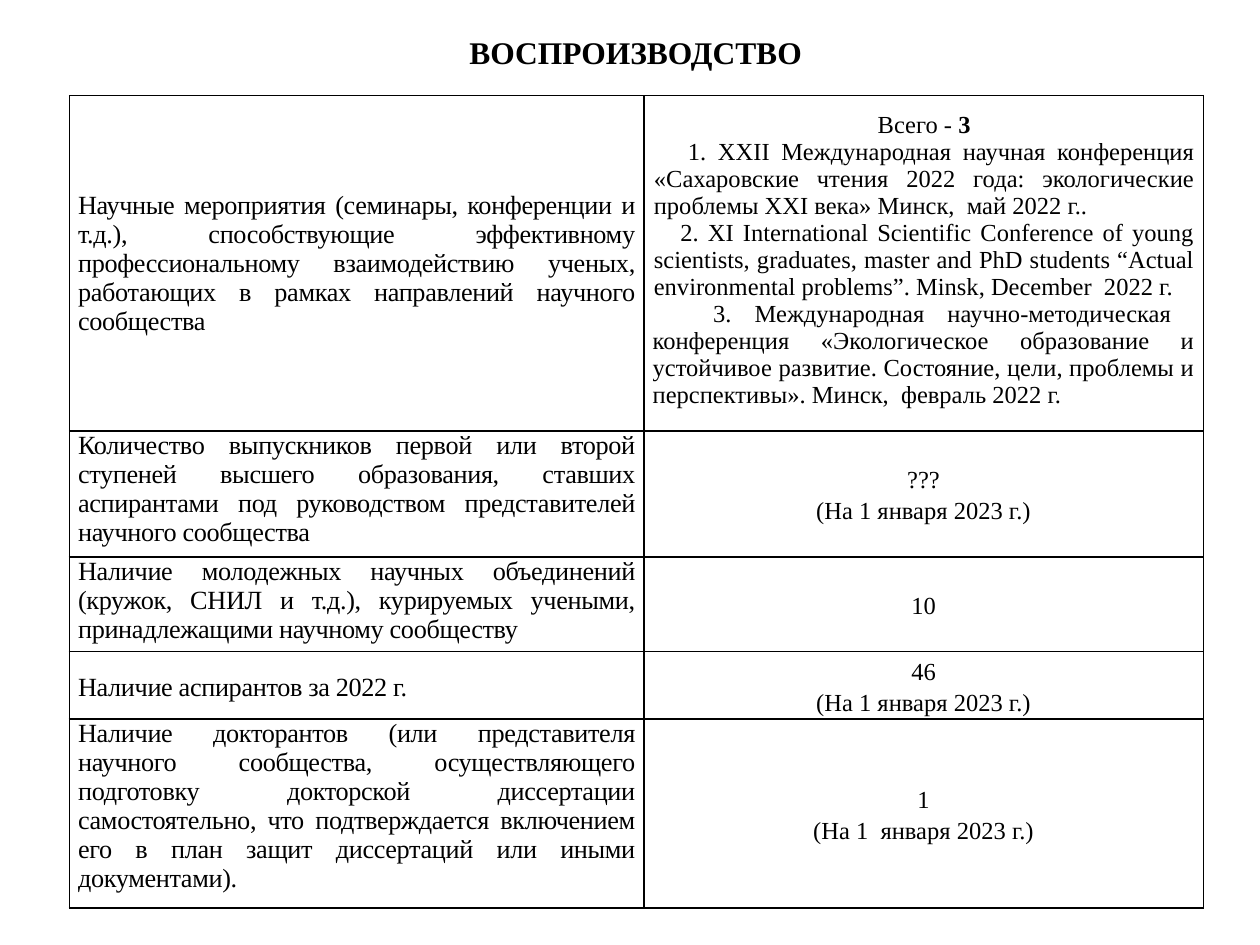
from dataclasses import dataclass

from lxml.etree import SubElement
from pptx import Presentation
from pptx.dml.color import RGBColor
from pptx.enum.text import MSO_ANCHOR, MSO_AUTO_SIZE, PP_ALIGN
from pptx.oxml.ns import qn
from pptx.util import Inches, Pt

BLACK = RGBColor(0, 0, 0)
FONT_NAME = "Times New Roman"
COLUMN_WIDTHS = (4.56, 4.44)
ROW_HEIGHTS = (2.66, 1.0, 0.75, 0.53, 1.5)


@dataclass
class Line:
    text: str
    size: float = 14
    alignment: PP_ALIGN = PP_ALIGN.CENTER
    line_spacing: float | Pt = 1.15
    margin: float = 0
    indent: float = 0
    tracking: int = 0
    bold_ending: str = ""


@dataclass
class Entry:
    lines: list[Line]
    anchor: MSO_ANCHOR = MSO_ANCHOR.MIDDLE
    border_width: float = 1


def criterion(text: str, line_spacing: float = 1.0) -> Line:
    return Line(text, 15, PP_ALIGN.JUSTIFY, line_spacing, tracking=-20)


def conference(text: str, margin: float, indent: float) -> Line:
    return Line(text, 14, PP_ALIGN.JUSTIFY, 1.0, margin, indent)


ROWS = [
    (
        Entry([criterion(
            "Научные мероприятия (семинары, конференции и т.д.), способствующие "
            "эффективному профессиональному взаимодействию ученых, работающих в "
            "рамках направлений научного сообщества")], border_width=0.75),
        Entry([
            Line("Всего - ", line_spacing=Pt(12), margin=0.01, bold_ending="3"),
            conference(
                "1. XXII Международная научная конференция «Сахаровские чтения 2022 "
                "года: экологические проблемы XXI века» Минск,  май 2022 г..",
                0.01, 0.27),
            conference(
                "2. XI International Scientific Conference of young scientists, "
                "graduates, master and PhD students “Actual environmental problems”. "
                "Minsk, December  2022 г.", 0.01, 0.21),
            conference(
                "3. Международная научно-методическая  конференция «Экологическое "
                "образование и устойчивое развитие. Состояние, цели, проблемы и "
                "перспективы». Минск,  февраль 2022 г.", 0, 0.48),
        ]),
    ),
    (
        Entry([criterion(
            "Количество выпускников первой или второй ступеней высшего образования, "
            "ставших аспирантами под руководством представителей научного "
            "сообщества")], MSO_ANCHOR.TOP),
        Entry([Line("???"), Line("(На 1 января 2023 г.)")]),
    ),
    (
        Entry([criterion(
            "Наличие молодежных научных объединений (кружок, СНИЛ и т.д.), "
            "курируемых учеными, принадлежащими научному сообществу")],
            MSO_ANCHOR.TOP),
        Entry([Line("10")]),
    ),
    (
        Entry([criterion("Наличие аспирантов за 2022 г.", 1.15)]),
        Entry([Line("46"), Line("(На 1 января 2023 г.)")]),
    ),
    (
        Entry([criterion(
            "Наличие докторантов (или представителя научного сообщества, "
            "осуществляющего подготовку докторской диссертации самостоятельно, что "
            "подтверждается включением его в план защит диссертаций или иными "
            "документами).")], MSO_ANCHOR.TOP),
        Entry([Line("1"), Line("(На 1  января 2023 г.)")]),
    ),
]


def apply_format(target, values: dict) -> None:
    for name, value in values.items():
        setattr(target, name, value)


def add_run(paragraph, text: str, size: float, bold: bool, tracking: int = 0) -> None:
    run = paragraph.add_run()
    run.text = text
    apply_format(run.font, {"name": FONT_NAME, "size": Pt(size), "bold": bold})
    run.font.color.rgb = BLACK
    if tracking:
        run.font._element.set("spc", str(tracking))


def write_line(paragraph, line: Line) -> None:
    apply_format(paragraph, {
        "alignment": line.alignment, "line_spacing": line.line_spacing,
    })
    properties = paragraph._p.get_or_add_pPr()
    properties.set("marL", str(Inches(line.margin)))
    properties.set("indent", str(Inches(line.indent)))
    add_run(paragraph, line.text, line.size, False, line.tracking)
    if line.bold_ending:
        add_run(paragraph, line.bold_ending, line.size, True)


def add_borders(cell, width: float) -> None:
    properties = cell._tc.get_or_add_tcPr()
    for side in ("a:lnL", "a:lnR", "a:lnT", "a:lnB"):
        border = SubElement(properties, qn(side), w=str(Pt(width)))
        fill = SubElement(border, qn("a:solidFill"))
        SubElement(fill, qn("a:srgbClr"), val=str(BLACK))


def fill_cell(cell, entry: Entry) -> None:
    apply_format(cell, {
        "vertical_anchor": entry.anchor,
        "margin_left": Inches(0.07), "margin_right": Inches(0.07),
        "margin_top": 0, "margin_bottom": 0,
    })
    add_borders(cell, entry.border_width)
    cell.fill.background()
    frame = cell.text_frame
    for index, line in enumerate(entry.lines):
        paragraph = frame.add_paragraph() if index else frame.paragraphs[0]
        write_line(paragraph, line)


def add_title(slide, text: str) -> None:
    title = slide.shapes.title
    apply_format(title, {
        "left": Inches(3.58), "top": Inches(0.21),
        "width": Inches(2.93), "height": Inches(0.4),
    })
    apply_format(title.text_frame, {
        "word_wrap": False, "auto_size": MSO_AUTO_SIZE.SHAPE_TO_FIT_TEXT,
        "vertical_anchor": MSO_ANCHOR.TOP,
    })
    paragraph = title.text_frame.paragraphs[0]
    apply_format(paragraph, {"alignment": PP_ALIGN.CENTER, "line_spacing": 1.0})
    add_run(paragraph, text, 18, True)


def add_indicator_table(slide) -> None:
    table = slide.shapes.add_table(
        len(ROWS), len(COLUMN_WIDTHS), Inches(0.55), Inches(0.76),
        Inches(sum(COLUMN_WIDTHS)), Inches(sum(ROW_HEIGHTS))).table
    apply_format(table, {"first_row": False, "horz_banding": False})
    for column, width in zip(table.columns, COLUMN_WIDTHS):
        column.width = Inches(width)
    for row, height, entries in zip(table.rows, ROW_HEIGHTS, ROWS):
        row.height = Inches(height)
        for cell, entry in zip(row.cells, entries):
            fill_cell(cell, entry)


def main() -> None:
    presentation = Presentation()
    apply_format(presentation, {
        "slide_width": Inches(10), "slide_height": Inches(7.5),
    })
    slide = presentation.slides.add_slide(presentation.slide_layouts[5])
    add_title(slide, "ВОСПРОИЗВОДСТВО")
    add_indicator_table(slide)
    presentation.save("out.pptx")


if __name__ == "__main__":
    main()
